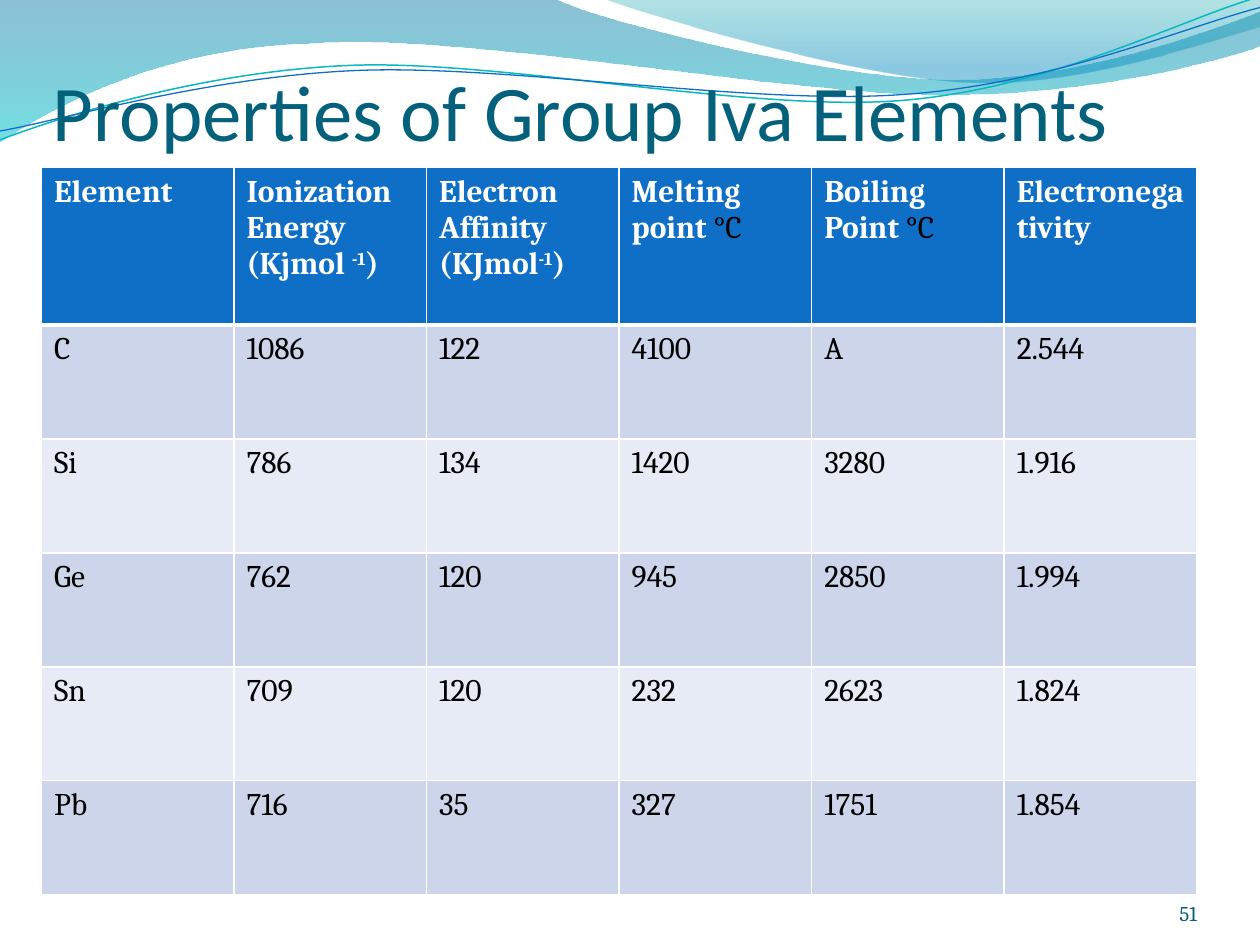
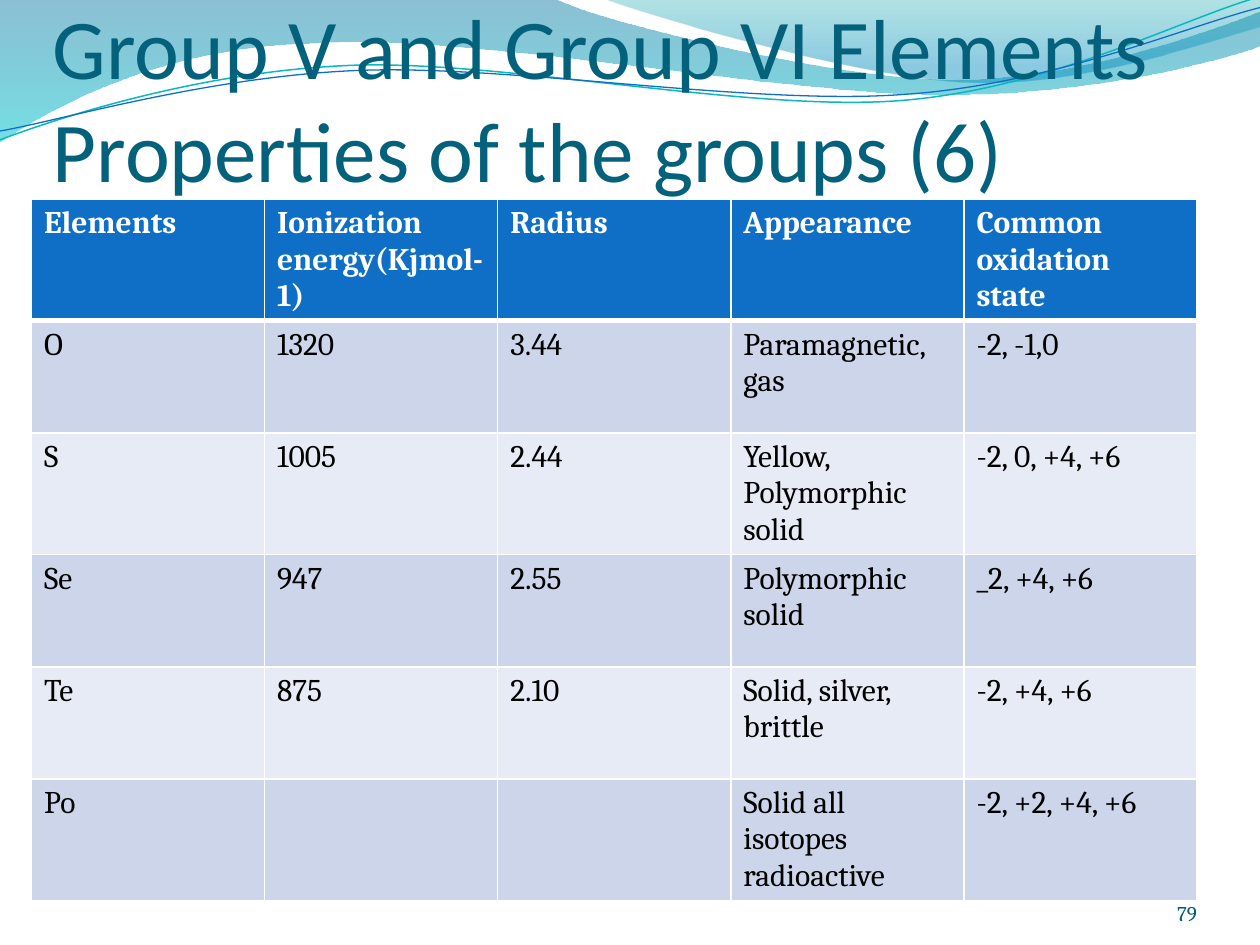
from dataclasses import dataclass

from lxml.etree import SubElement
from pptx import Presentation
from pptx.dml.color import RGBColor
from pptx.enum.text import MSO_ANCHOR as Anchor, MSO_AUTO_SIZE as AutoSize, PP_ALIGN as Align
from pptx.oxml.ns import qn
from pptx.util import Inches, Pt


@dataclass(frozen=True)
class Theme:
    title_font: str = "Calibri"
    text_font: str = "Cambria"
    title_ink: str = "04617B"
    number_ink: str = "045D75"
    header_ink: str = "FFFFFF"
    cell_ink: str = "000000"
    header_fill: str = "0F6FC6"
    row_fills: tuple = ("CCD5EA", "E7EBF5")
    grid: str = "FFFFFF"
    teal_line: str = "0AB8BF"
    blue_line: str = "0F6FC6"
    # Gradient stops: position, colour, opacity in percent
    wide_wave: tuple = ((0, "0074A1", 45), (1, "00C6CF", 55))
    right_wave: tuple = ((0, "00A1A9", 30), (0.8, "008BBF", 45))
    cell_size: float = 18
    number_size: float = 12
    grid_width: float = 1
    header_rule: float = 3


THEME = Theme()


@dataclass(frozen=True)
class Box:
    left: float
    top: float
    width: float
    height: float

    def lengths(self):
        return [Inches(n) for n in (self.left, self.top, self.width, self.height)]


@dataclass(frozen=True)
class Piece:
    text: str
    raised: bool = False
    plain: bool = False


NUMBER_BOX = Box(8.67, 6.95, 0.83, 0.4)
RAISED = Piece("-1", raised=True)
CELSIUS = Piece(" °C", plain=True)

# Each outline is a list of steps: two numbers for a line, six for a curve
WIDE_WAVE = [
    (0, 0), (4.4, -0.01), (4.76, 0.17, 6.64, 0.63, 7.58, 0.63),
    (8.53, 0.63, 9.58, 0.26, 10, 0.09), (10.01, 0.36),
    (9.83, 0.44, 8.7, 0.76, 7.46, 0.75), (6.22, 0.75, 3.82, 0.28, 2.57, 0.34),
    (1.29, 0.36, 0.46, 0.83, -0.01, 1.13), (0, 0),
]
RIGHT_WAVE = [
    (4.79, -0.01), (5.09, 0.11, 6.82, 0.62, 7.69, 0.65),
    (8.56, 0.69, 9.61, 0.32, 10, 0.21), (10, 0), (4.79, -0.01),
]
TEAL_CURVE = [
    (0, 1.11), (0.48, 0.93, 1.58, 0.57, 2.77, 0.52),
    (3.95, 0.47, 5.93, 0.89, 7.13, 0.8), (8.33, 0.71, 9.38, 0.15, 9.98, -0.02),
]
BLUE_CURVE = [
    (0, 1.04), (0.47, 0.96, 1.64, 0.61, 2.83, 0.56),
    (4.03, 0.51, 5.97, 0.84, 7.17, 0.75), (8.36, 0.67, 9.41, 0.21, 10, 0.06),
]

GROUP_IVA = [
    ["Element",
     ["Ionization", "\n", "Energy (Kjmol ", RAISED, ")"],
     ["Electron Affinity (KJmol", RAISED, ")"],
     ["Melting point", CELSIUS],
     ["Boiling Point", CELSIUS],
     "Electronegativity"],
    ["C", "1086", "122", "4100", "A", "2.544"],
    ["Si", "786", "134", "1420", "3280", "1.916"],
    ["Ge", "762", "120", "945", "2850", "1.994"],
    ["Sn", "709", "120", "232", "2623", "1.824"],
    ["Pb", "716", "35", "327", "1751", "1.854"],
]
GROUP_VI = [
    ["Elements", "Ionization energy(Kjmol-1)", "Radius", "Appearance", "Common oxidation state"],
    ["O", "1320", "3.44", "Paramagnetic, gas", "-2, -1,0"],
    ["S", "1005", "2.44", "Yellow, Polymorphic solid", "-2, 0, +4, +6"],
    ["Se", "947", "2.55", "Polymorphic solid", "_2, +4, +6"],
    ["Te", "875", "2.10", "Solid, silver, brittle", "-2, +4, +6"],
    ["Po", "", "", "Solid all isotopes radioactive", "-2, +2, +4, +6"],
]


def rgb(code):
    return RGBColor.from_string(code)


def add_span(para, text, font, size, ink, bold=False):
    span = para.add_run()
    span.text = text
    span.font.name, span.font.size, span.font.bold = font, Pt(size), bold
    span.font.color.rgb = rgb(ink)
    return span


def add_outline(page, steps, close):
    """Join the end points with lines, then bend the lines that have control points."""
    ends = [(Inches(step[-2]), Inches(step[-1])) for step in steps]
    builder = page.shapes.build_freeform(*ends[0])
    builder.add_line_segments(ends[1:], close=close)
    outline = builder.convert_to_shape()
    outline.shadow.inherit = False
    segments = list(outline.element.iter(qn("a:lnTo")))
    for segment, step in zip(segments, steps[1:]):
        if len(step) == 2:
            continue
        bend = SubElement(segment.getparent(), qn("a:cubicBezTo"))
        for x, y in zip(step[::2], step[1::2]):
            SubElement(bend, qn("a:pt"), x=str(Inches(x) - outline.left),
                       y=str(Inches(y) - outline.top))
        segment.getparent().replace(segment, bend)
    return outline


def add_wave(page, steps, stops):
    wave = add_outline(page, steps, close=True)
    wave.line.fill.background()
    wave.fill.gradient()
    wave.fill.gradient_angle = 270
    for stop, (position, code, _) in zip(wave.fill.gradient_stops, stops):
        stop.position = position
        stop.color.rgb = rgb(code)
    colours = list(wave.element.iter(qn("a:srgbClr")))
    for colour, (_, _, opacity) in zip(colours, stops):
        SubElement(colour, qn("a:alpha")).set("val", str(opacity * 1000))
    return wave


def add_curve(page, steps, code, width):
    curve = add_outline(page, steps, close=False)
    curve.fill.background()
    curve.line.color.rgb = rgb(code)
    curve.line.width = Pt(width)
    return curve


def decorate_master(deck, page):
    """Draw the waves on a page, then move them behind everything on the master."""
    waves = [
        add_wave(page, WIDE_WAVE, THEME.wide_wave),
        add_wave(page, RIGHT_WAVE, THEME.right_wave),
        add_curve(page, TEAL_CURVE, THEME.teal_line, 0.85),
        add_curve(page, BLUE_CURVE, THEME.blue_line, 0.75),
    ]
    tree = deck.slide_master.shapes.element
    for index, wave in enumerate(waves, start=2):
        tree.insert(index, wave.element)


def set_frame(frame, anchor, top_inset=0):
    frame.word_wrap = True
    frame.auto_size = AutoSize.NONE
    frame.vertical_anchor = anchor
    frame.margin_left = frame.margin_right = frame.margin_bottom = 0
    frame.margin_top = Inches(top_inset)


def fill_title(page, box, lines, size):
    title = page.shapes.title
    title.left, title.top, title.width, title.height = box.lengths()
    set_frame(title.text_frame, Anchor.BOTTOM, top_inset=0.05)
    para = title.text_frame.paragraphs[0]
    para.alignment = Align.LEFT
    for index, line in enumerate(lines):
        if index:
            para.add_line_break()
        add_span(para, line, THEME.title_font, size, THEME.title_ink)


def add_page_number(page, box, number):
    frame = page.shapes.add_textbox(*box.lengths()).text_frame
    set_frame(frame, Anchor.BOTTOM)
    para = frame.paragraphs[0]
    para.alignment = Align.RIGHT
    add_span(para, str(number), THEME.text_font, THEME.number_size, THEME.number_ink)


def set_borders(cell, top, bottom):
    properties = cell._tc.get_or_add_tcPr()
    sides = (("L", THEME.grid_width), ("R", THEME.grid_width), ("T", top), ("B", bottom))
    for index, (side, width) in enumerate(sides):
        line = SubElement(properties, qn(f"a:ln{side}"), w=str(Pt(width)))
        SubElement(SubElement(line, qn("a:solidFill")), qn("a:srgbClr")).set("val", THEME.grid)
        properties.insert(index, line)


def fill_cell(cell, content, row):
    header = row == 0
    cell.fill.solid()
    cell.fill.fore_color.rgb = rgb(THEME.header_fill if header else THEME.row_fills[(row - 1) % 2])
    set_borders(cell,
                top=THEME.header_rule if row == 1 else THEME.grid_width,
                bottom=THEME.header_rule if header else THEME.grid_width)
    if not content:
        return
    para = cell.text_frame.paragraphs[0]
    for piece in [content] if isinstance(content, str) else content:
        if piece == "\n":
            para = cell.text_frame.add_paragraph()
            continue
        if isinstance(piece, str):
            piece = Piece(piece)
        strong = header and not piece.plain
        span = add_span(para, piece.text, THEME.text_font, THEME.cell_size,
                        THEME.header_ink if strong else THEME.cell_ink, strong)
        if piece.raised:
            span._r.get_or_add_rPr().set("baseline", "30000")


def add_data_table(page, box, rows, header_height):
    columns = len(rows[0])
    table = page.shapes.add_table(len(rows), columns, *box.lengths()).table
    for column in table.columns:
        column.width = Inches(box.width / columns)
    body_height = (box.height - header_height) / (len(rows) - 1)
    for index, contents in enumerate(rows):
        table.rows[index].height = Inches(body_height if index else header_height)
        for column, content in enumerate(contents):
            fill_cell(table.cell(index, column), content, index)


def build_table_page(page, number, title_box, title_lines, title_size, table_box, rows,
                     header_height):
    fill_title(page, title_box, title_lines, title_size)
    add_data_table(page, table_box, rows, header_height)
    add_page_number(page, NUMBER_BOX, number)


def main():
    deck = Presentation()
    deck.slide_width, deck.slide_height = Inches(10), Inches(7.5)
    title_only = deck.slide_layouts[5]
    group_four, group_six = (deck.slides.add_slide(title_only) for _ in range(2))
    decorate_master(deck, group_four)
    build_table_page(group_four, 51, Box(0.42, 0, 9, 1.25),
                     ["Properties of Group Iva Elements"], 45,
                     Box(0.33, 1.33, 9.17, 5.77), GROUP_IVA, header_height=1.25)
    build_table_page(group_six, 79, Box(0.42, 0.33, 9, 1.25),
                     ["Group V and Group VI Elements", "Properties of the groups (6)"], 48.6,
                     Box(0.25, 1.58, 9.25, 5.34), GROUP_VI, header_height=0.89)
    deck.save("out.pptx")


if __name__ == "__main__":
    main()
